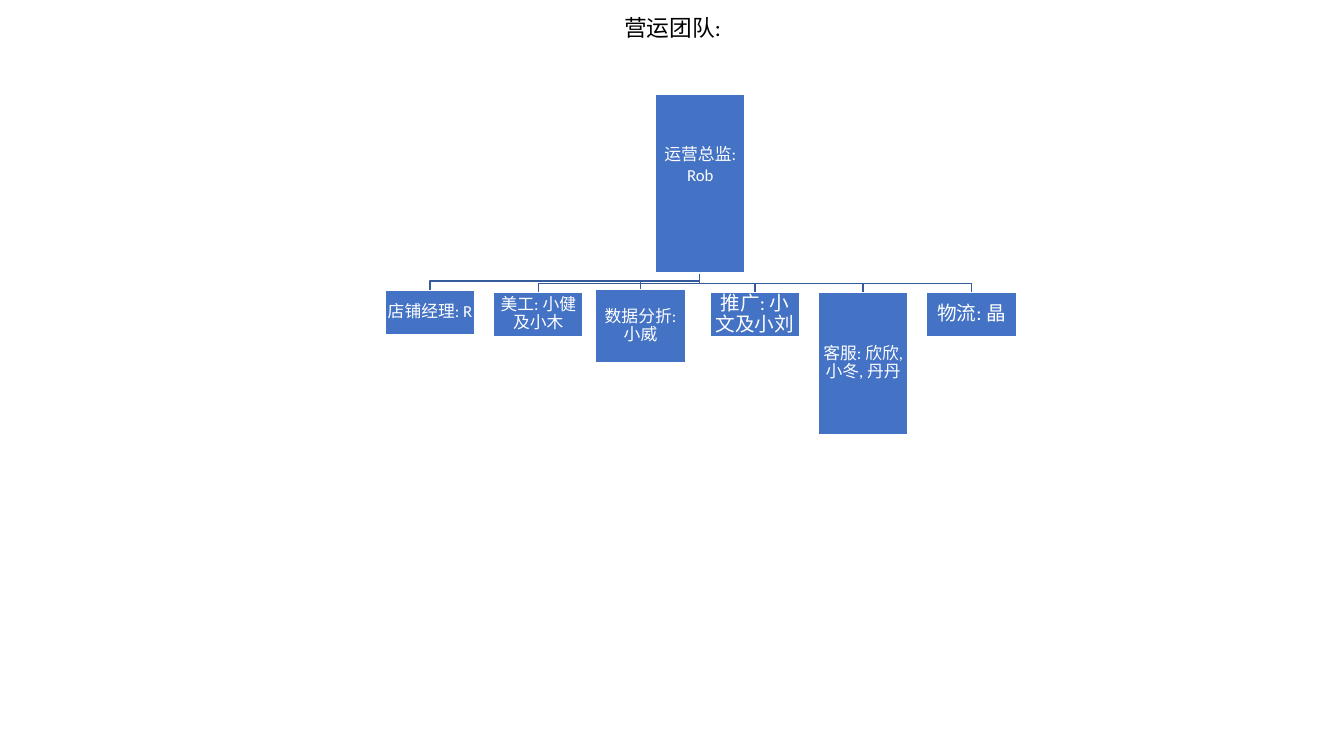
"""Build the operations team organisation chart slide."""
from pptx import Presentation
from pptx.dml.color import RGBColor
from pptx.enum.shapes import MSO_SHAPE
from pptx.enum.text import MSO_ANCHOR, PP_ALIGN
from pptx.util import Inches, Pt

RECT = MSO_SHAPE.RECTANGLE
MIDDLE = MSO_ANCHOR.MIDDLE
CENTER = PP_ALIGN.CENTER

TITLE = "营运团队:"
DIRECTOR = "运营总监: Rob"
TEAM = [
    {"text": "店铺经理: R", "size": 12, "top": 2.88, "height": 0.44},
    {"text": "美工: 小健及小木", "size": 12, "top": 2.9, "height": 0.44},
    {"text": "数据分折: 小威", "size": 12, "top": 2.87, "height": 0.73, "nudge": -0.06},
    {"text": "推广: 小文及小刘", "size": 14, "top": 2.9, "height": 0.44},
    {"text": "客服: 欣欣, 小冬, 丹丹", "size": 12, "top": 2.9, "height": 1.41},
    {"text": "物流: 晶", "size": 14, "top": 2.9, "height": 0.44},
]
COLORS = {"box": "4472C4", "edge": "FFFFFF", "link": "365B9D", "title": "000000"}
FONT = "Calibri"

SLIDE_W, SLIDE_H = 13.33, 7.5
BOX_W, PITCH, TEAM_LEFT = 0.89, 1.074, 3.82
DIRECTOR_LEFT, DIRECTOR_TOP, DIRECTOR_H = 6.5, 0.94, 1.77
TRUNK_X, TRUNK_Y, ELBOW_RISE = 6.94, 2.72, 0.09


def rgb(name):
    return RGBColor.from_string(COLORS[name])


def write(sp, text, size=12, color="edge", spacing=0.9, inset=0.01, bottom=0.01):
    tf = sp.text_frame
    tf.word_wrap = True
    tf.vertical_anchor = MIDDLE
    tf.margin_left = tf.margin_right = tf.margin_top = Inches(inset)
    tf.margin_bottom = Inches(bottom)
    p = tf.paragraphs[0]
    p.alignment = CENTER
    p.line_spacing = spacing
    r = p.add_run()
    r.text = text
    r.font.size = Pt(size)
    r.font.name = FONT
    r.font.color.rgb = rgb(color)


def add_box(s, left, top, height, text, **fmt):
    sp = s.shapes.add_shape(RECT, Inches(left), Inches(top), Inches(BOX_W), Inches(height))
    sp.shadow.inherit = False
    sp.fill.solid()
    sp.fill.fore_color.rgb = rgb("box")
    sp.line.color.rgb = rgb("edge")
    sp.line.width = Pt(1)
    write(sp, text, **fmt)


def add_link(s, x, y):
    elbow = y - ELBOW_RISE
    points = [(TRUNK_X, elbow), (x, elbow), (x, y)]
    fb = s.shapes.build_freeform(Inches(TRUNK_X), Inches(TRUNK_Y))
    fb.add_line_segments([(Inches(px), Inches(py)) for px, py in points], close=False)
    sp = fb.convert_to_shape()
    sp.shadow.inherit = False
    sp.fill.background()
    sp.line.color.rgb = rgb("link")
    sp.line.width = Pt(1)


def main():
    prs = Presentation()
    prs.slide_width, prs.slide_height = Inches(SLIDE_W), Inches(SLIDE_H)
    s = prs.slides.add_slide(prs.slide_layouts[6])

    title = s.shapes.add_textbox(Inches(1.67), Inches(0.14), Inches(10), Inches(0.3))
    write(title, TITLE, size=16.2, color="title")

    lefts = [TEAM_LEFT + i * PITCH + m.get("nudge", 0) for i, m in enumerate(TEAM)]
    for left, member in zip(lefts, TEAM):
        add_link(s, left + BOX_W / 2, member["top"])

    add_box(s, DIRECTOR_LEFT, DIRECTOR_TOP, DIRECTOR_H, DIRECTOR, spacing=1.0, bottom=0.4)
    for left, member in zip(lefts, TEAM):
        add_box(s, left, member["top"], member["height"], member["text"], size=member["size"])

    prs.save("out.pptx")


if __name__ == "__main__":
    main()
